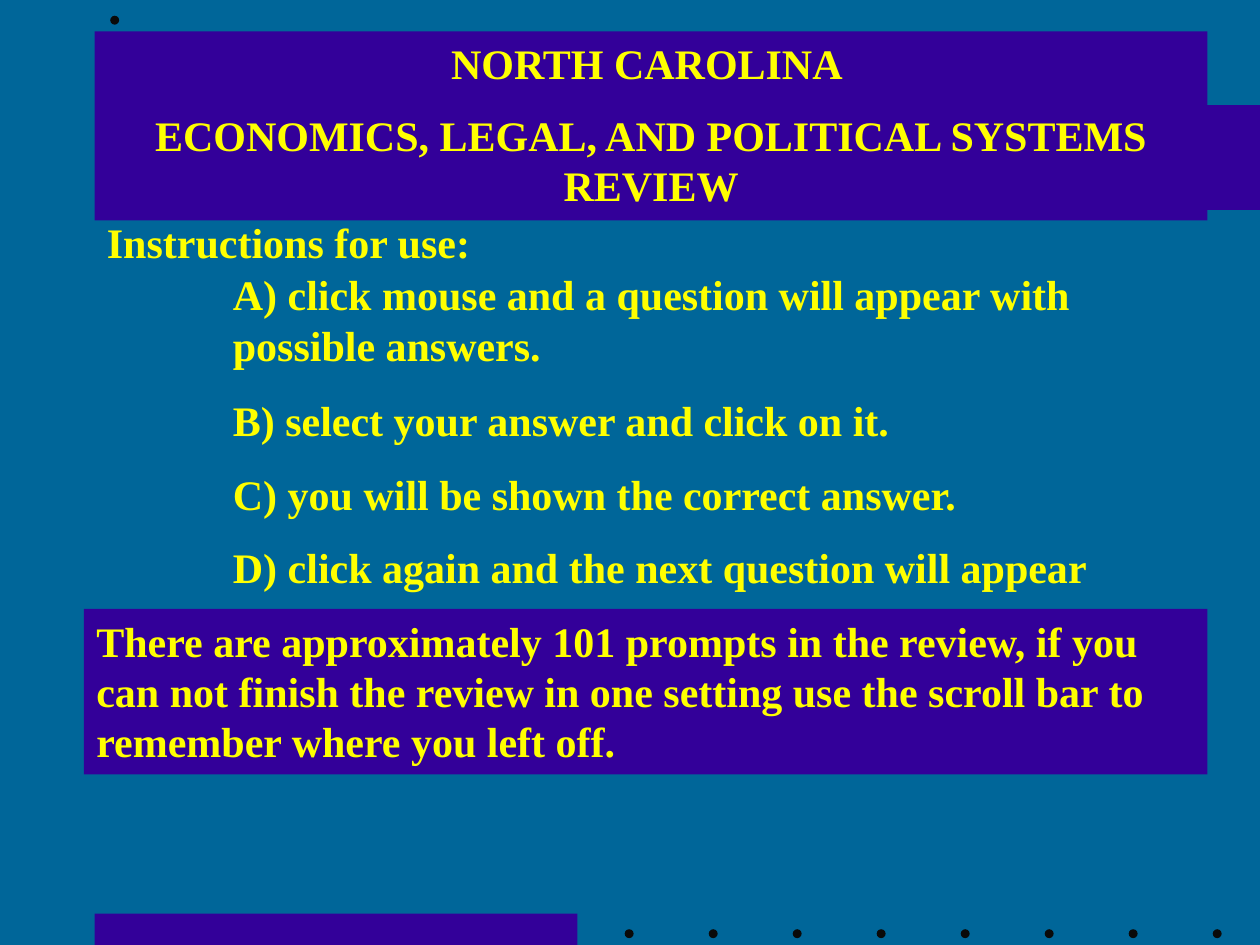
from pptx import Presentation
from pptx.dml.color import RGBColor as RGB
from pptx.enum.shapes import MSO_SHAPE as SHAPE
from pptx.enum.text import MSO_ANCHOR as ANCHOR, PP_ALIGN as ALIGN
from pptx.util import Inches, Pt

COLORS = {"background": "006699", "band": "330099", "dot": "0A0A0A", "text": "FFFF00"}
FONT = "Times New Roman"
COLS, ROWS = 120, 90  # grid cells are 1/12 inch
WIDTH, HEIGHT = Inches(10), Inches(7.5)
DOT = 0.85

STEPS = [  # row, width, height, text
    (25, 91, 10.8, "A) click mouse and a question will appear with possible answers."),
    (37, 92, 6, "B) select your answer and click on it."),
    (44, 85, 6, "C) you will be shown the correct answer."),
    (51, 88, 6, "D) click again and the next question will appear"),
]


def color(name):
    return RGB.from_string(COLORS[name])


def box(col, row, cols, rows):
    """Turn grid cells into left, top, width, height."""
    return (round(col * WIDTH / COLS), round(row * HEIGHT / ROWS),
            round(cols * WIDTH / COLS), round(rows * HEIGHT / ROWS))


def add_shape(s, kind, cells, fill):
    sp = s.shapes.add_shape(kind, *box(*cells))
    sp.shadow.inherit = False
    sp.fill.solid()
    sp.fill.fore_color.rgb = color(fill)
    sp.line.fill.background()
    return sp


def add_band(s, *cells):
    return add_shape(s, SHAPE.RECTANGLE, cells, "band")


def add_dot(s, col, row):
    return add_shape(s, SHAPE.OVAL, (col, row, DOT, DOT), "dot")


def write(sp, *lines, size=24, bold=True, align=ALIGN.LEFT, gap=12):
    tf = sp.text_frame
    tf.word_wrap = True
    tf.vertical_anchor = ANCHOR.TOP
    for i, line in enumerate(lines):
        p = tf.add_paragraph() if i else tf.paragraphs[0]
        p.alignment = align
        if i:
            p.space_before = Pt(gap)
        r = p.add_run()
        r.text = line
        r.font.name, r.font.size, r.font.bold = FONT, Pt(size), bold
        r.font.color.rgb = color("text")


def main():
    prs = Presentation()
    prs.slide_width, prs.slide_height = WIDTH, HEIGHT
    s = prs.slides.add_slide(prs.slide_layouts[6])
    s.background.fill.solid()
    s.background.fill.fore_color.rgb = color("background")

    # Decoration
    add_band(s, 9, 87, 46, 3)
    for i in range(8):
        add_dot(s, 59.5 + 8 * i, 88.5)
    add_band(s, 10, 10, 110, 10)
    add_dot(s, 10.5, 1.5)

    # Title
    write(add_band(s, 9, 3, 106, 18), "NORTH CAROLINA ",
          "ECONOMICS, LEGAL, AND POLITICAL SYSTEMS REVIEW", align=ALIGN.CENTER)

    # Instructions
    write(s.shapes.add_textbox(*box(9, 20, 38, 6)), "Instructions for use:")
    for row, cols, rows, text in STEPS:
        write(s.shapes.add_textbox(*box(21, row, cols, rows)), text)

    # Closing note
    write(add_band(s, 8, 58, 107, 15.75),
          "There are approximately 101 prompts in the review, if you can not finish "
          "the review in one setting use the scroll bar to remember where you left off.")

    prs.save("out.pptx")


if __name__ == "__main__":
    main()
